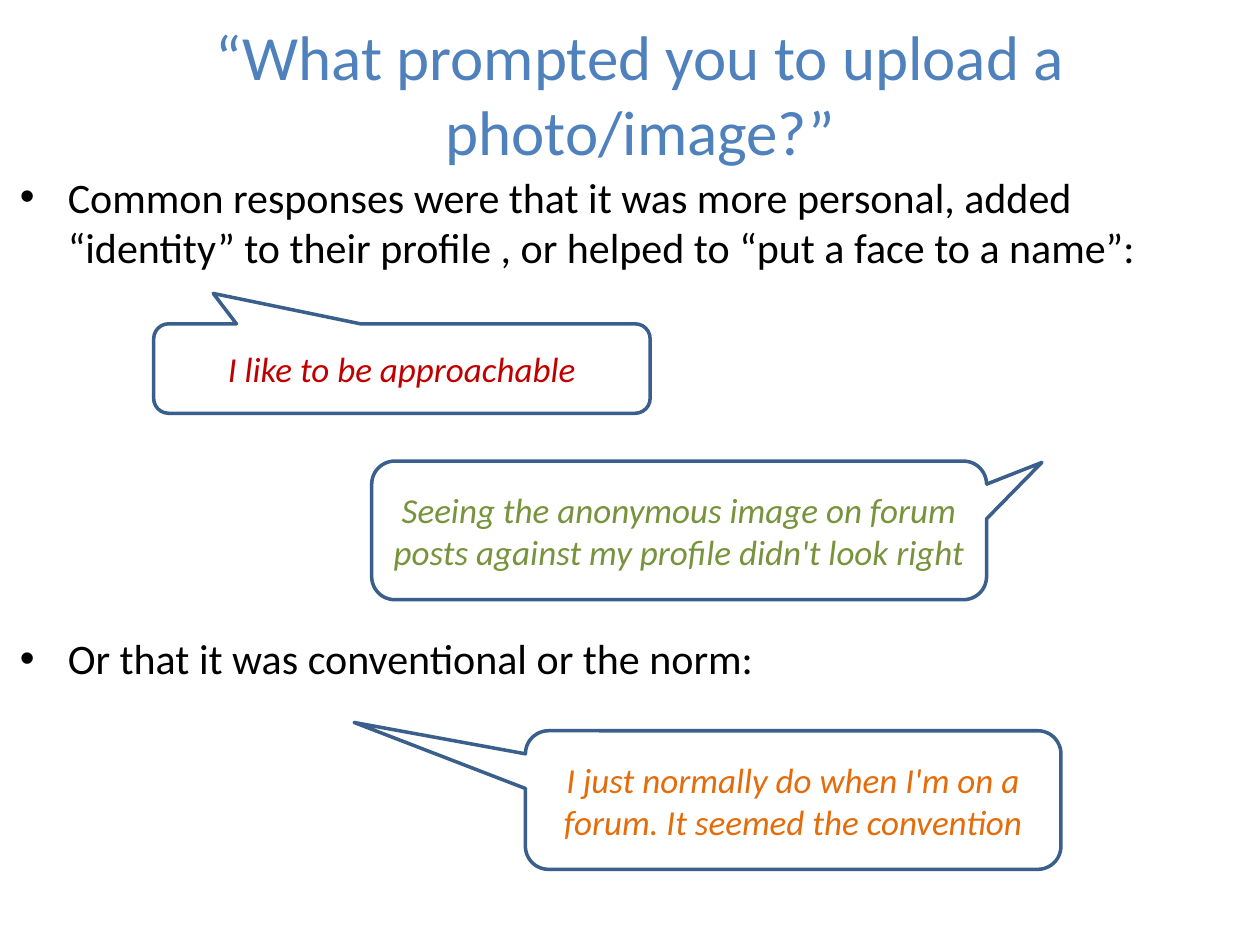
from lxml.etree import SubElement
from pptx import Presentation
from pptx.dml.color import RGBColor
from pptx.enum.shapes import MSO_SHAPE
from pptx.enum.text import MSO_ANCHOR, PP_ALIGN
from pptx.oxml.ns import qn
from pptx.util import Inches, Pt

TITLE = "“What prompted you to upload a photo/image?”"
BULLETS = [
    "Common responses were that it was more personal, added “identity” "
    "to their profile , or helped to “put a face to a name”:",
    "Or that it was conventional or the norm:",
]
BULLET_GAP = 206  # points, room for the first two callouts
# text, colour, (left, top, width, height), pointer tip as shares of the size
CALLOUTS = [
    ("I just normally do when I'm on a forum. It seemed the convention",
     "E46C0A", (4.17, 5.8, 4.25, 1.1), (-0.82, -0.56)),
    ("Seeing the anonymous image on forum posts against my profile "
     "didn't look right",
     "77933C", (2.95, 3.66, 4.88, 1.1), (0.59, -0.49)),
    ("I like to be approachable",
     "C00000", (1.22, 2.57, 3.94, 0.71), (-0.38, -0.84)),
]


def rgb(value):
    return RGBColor.from_string(value)


def add_text(p, text, size, color, align=PP_ALIGN.LEFT, italic=False):
    p.alignment = align
    r = p.add_run()
    r.text = text
    r.font.name = "Calibri"
    r.font.size = Pt(size)
    r.font.italic = italic
    r.font.color.rgb = rgb(color)


def add_bullet(p, indent=0.38):
    pPr = p._p.get_or_add_pPr()
    pPr.set("marL", str(Inches(indent)))
    pPr.set("indent", str(-Inches(indent)))
    SubElement(pPr, qn("a:buFont"), typeface="Arial")
    SubElement(pPr, qn("a:buChar"), char="•")


def add_box(s, box, anchor):
    tf = s.shapes.add_textbox(*map(Inches, box)).text_frame
    tf.word_wrap = True
    tf.vertical_anchor = anchor
    return tf


def add_callout(s, text, color, box, tip):
    sp = s.shapes.add_shape(MSO_SHAPE.ROUNDED_RECTANGULAR_CALLOUT,
                            *map(Inches, box))
    sp.adjustments[0], sp.adjustments[1] = tip
    sp.shadow.inherit = False
    sp.fill.background()
    sp.line.color.rgb = rgb("3A5F8C")
    sp.line.width = Pt(2)
    tf = sp.text_frame
    tf.word_wrap = True
    tf.vertical_anchor = MSO_ANCHOR.MIDDLE
    add_text(tf.paragraphs[0], text, 20, color, PP_ALIGN.CENTER, italic=True)


prs = Presentation()
prs.slide_width, prs.slide_height = Inches(10), Inches(7.5)
s = prs.slides.add_slide(prs.slide_layouts[6])

tf = add_box(s, (0.06, 1.31, 9.66, 5.83), MSO_ANCHOR.TOP)
for i, text in enumerate(BULLETS):
    p = tf.add_paragraph() if i else tf.paragraphs[0]
    add_bullet(p)
    if i:
        p.space_before = Pt(BULLET_GAP)
    add_text(p, text, 24, "000000")

tf = add_box(s, (0.2, 0.21, 9.76, 1.05), MSO_ANCHOR.MIDDLE)
add_text(tf.paragraphs[0], TITLE, 36, "4F81BD", PP_ALIGN.CENTER)

for callout in CALLOUTS:
    add_callout(s, *callout)

prs.save("out.pptx")
